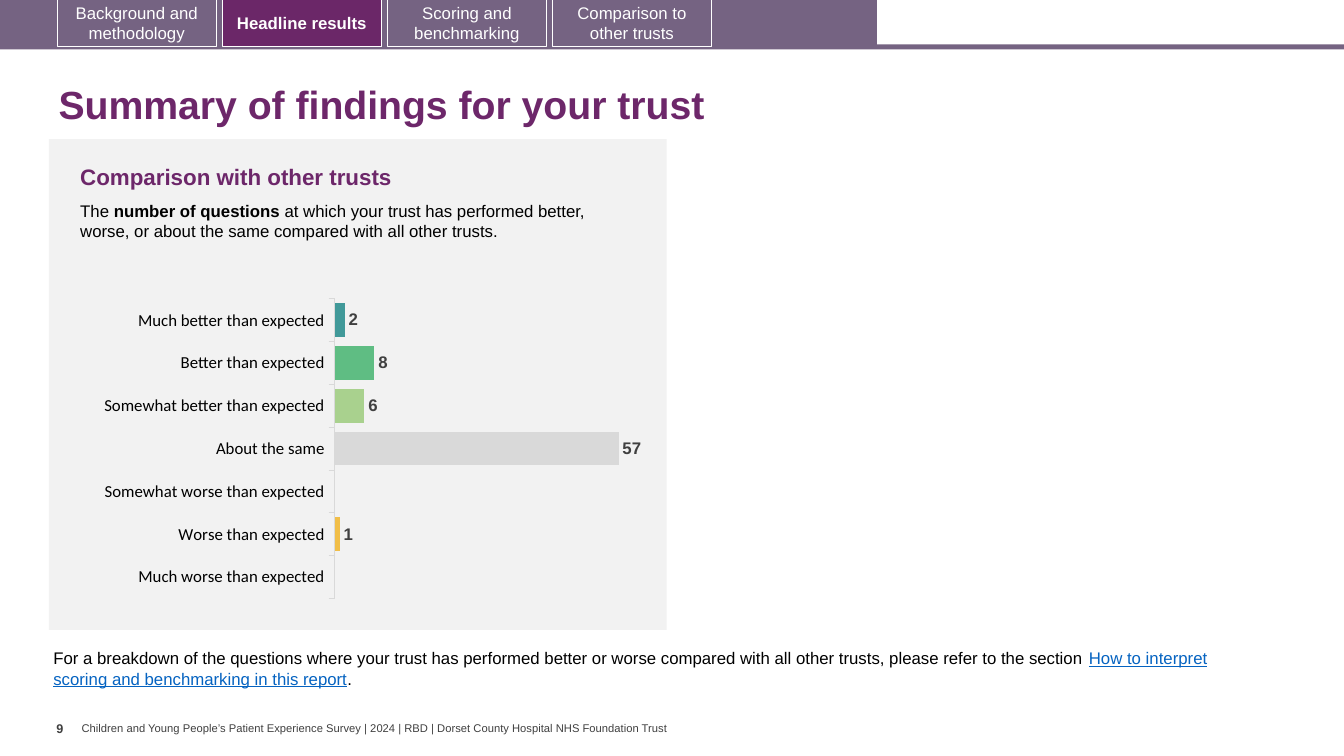
from lxml import etree
from pptx import Presentation
from pptx.chart.data import CategoryChartData
from pptx.dml.color import RGBColor
from pptx.enum.chart import (XL_CHART_TYPE as CT, XL_LABEL_POSITION as LP,
                             XL_TICK_LABEL_POSITION as TLP, XL_TICK_MARK as TM)
from pptx.enum.shapes import MSO_SHAPE as SHAPE
from pptx.enum.text import MSO_ANCHOR as ANCHOR, MSO_AUTO_SIZE as FIT, PP_ALIGN as ALIGN
from pptx.oxml.ns import qn
from pptx.util import Pt

# Content
TITLE = "Summary of findings for your trust"
TABS = ["Background and methodology", "Headline results",
        "Scoring and benchmarking", "Comparison to other trusts"]
ACTIVE_TAB = "Headline results"
PANEL_HEADING = "Comparison with other trusts"
PANEL_TEXT = [
    ("The ", {}),
    ("number of questions ", {"bold": True}),
    ("at which your trust has performed better, worse, or about the same "
     "compared with all other trusts.", {}),
]
NOTE = [
    ("For a breakdown of the questions where your trust has performed better or worse "
     "compared with all other trusts, please refer to the section ", {}),
    ("How to interpret scoring and benchmarking in this report",
     {"color": "link", "underline": True}),
    (".", {}),
]
PAGE = "9"
FOOTER = ("Children and Young People’s Patient Experience Survey | 2024 | RBD | "
          "Dorset County Hospital NHS Foundation Trust")
RESULTS = [  # category, number of questions, bar colour
    ("Much better than expected", 2, "419999"),
    ("Better than expected", 8, "5FBD83"),
    ("Somewhat better than expected", 6, "A9D18E"),
    ("About the same", 57, "D9D9D9"),
    ("Somewhat worse than expected", None, "FFD966"),
    ("Worse than expected", 1, "F1BE48"),
    ("Much worse than expected", None, "E87722"),
]
COLORS = {"bar": "756382", "active": "6B2768", "title": "6D276A", "panel": "F2F2F2",
          "text": "000000", "grey": "404040", "axis": "D9D9D9", "link": "0563C1",
          "white": "FFFFFF"}
PLOT = {"x": 0.467, "y": 0.072, "w": 0.476, "h": 0.872}


def rgb(name):
    return RGBColor.from_string(COLORS.get(name, name))


def set_font(font, size, color="text", bold=False, underline=False, name="Arial"):
    font.name, font.size, font.bold = name, Pt(size), bold
    font.color.rgb = rgb(color)
    if underline:
        font.underline = True


def write(s, text, size=12, color="text", bold=False, align=ALIGN.LEFT,
          anchor=ANCHOR.TOP, wrap=True, insets=None, spacing=None):
    """Fill a shape with one paragraph: a string, or (text, format) runs."""
    tf = s.text_frame
    tf.word_wrap, tf.auto_size, tf.vertical_anchor = wrap, FIT.NONE, anchor
    if insets:
        tf.margin_left, tf.margin_top, tf.margin_right, tf.margin_bottom = map(Pt, insets)
    p = tf.paragraphs[0]
    p.alignment = align
    if spacing:
        p.line_spacing = spacing
    for part, extra in [(text, {})] if isinstance(text, str) else text:
        r = p.add_run()
        r.text = part
        set_font(r.font, **{"size": size, "color": color, "bold": bold, **extra})


def add_rect(box, fill, line=None):
    s = slide.shapes.add_shape(SHAPE.RECTANGLE, *map(Pt, box))
    s.shadow.inherit = False
    s.fill.solid()
    s.fill.fore_color.rgb = rgb(fill)
    if line:
        s.line.color.rgb = rgb(line)
        s.line.width = Pt(0.75)
    else:
        s.line.fill.background()
    return s


def add_text(box, text, **fmt):
    write(slide.shapes.add_textbox(*map(Pt, box)), text, **fmt)


prs = Presentation()
prs.slide_width, prs.slide_height = Pt(960), Pt(540)
slide = prs.slides.add_slide(prs.slide_layouts[5])

# Navigation band and tabs
add_rect((0, 31.7, 960, 3.6), "bar")
add_rect((0, 0, 626.4, 33.8), "bar")
TAB_LEFT, TAB_PITCH, TAB_WIDTH = 41, 117.9, 113.5
for i, label in enumerate(TABS):
    active = label == ACTIVE_TAB
    tab = add_rect((TAB_LEFT + i * TAB_PITCH, -0.7, TAB_WIDTH, 33.8),
                   "active" if active else "bar", line="white")
    write(tab, label, color="white", bold=active, align=ALIGN.CENTER, anchor=ANCHOR.MIDDLE)

# Title
title = slide.shapes.title
title.left, title.top, title.width, title.height = map(Pt, (34.6, 50.4, 899.3, 51.8))
write(title, TITLE, size=28, color="title", bold=True, anchor=ANCHOR.MIDDLE, spacing=0.9)

# Panel
add_rect((34.9, 99.4, 441.4, 350.6), "panel")
add_text((50.2, 113, 397.4, 26.6), PANEL_HEADING, size=16, color="title", bold=True)
add_text((50.2, 139.7, 380.9, 51.1), PANEL_TEXT)

# Chart
data = CategoryChartData(number_format="0")
data.categories = [category for category, _, _ in RESULTS]
data.add_series("Series 1", [count for _, count, _ in RESULTS])
chart = slide.shapes.add_chart(CT.BAR_CLUSTERED, *map(Pt, (29.5, 195.8, 448.6, 245.5)),
                               data).chart
chart.has_legend = chart.has_title = False
set_font(chart.font, 10, name="Calibri")

cat_axis, val_axis = chart.category_axis, chart.value_axis
cat_axis.reverse_order = True
cat_axis.has_major_gridlines = False
cat_axis.major_tick_mark, cat_axis.minor_tick_mark = TM.OUTSIDE, TM.NONE
cat_axis.tick_label_position = TLP.LOW
cat_axis.format.line.color.rgb = rgb("axis")
cat_axis.format.line.width = Pt(0.75)
set_font(cat_axis.tick_labels.font, 12, name="Calibri")
val_axis.minimum_scale, val_axis.maximum_scale = 0, 60
val_axis.has_major_gridlines = val_axis.visible = False

plot = chart.plots[0]
plot.gap_width, plot.vary_by_categories = 27, False
series = plot.series[0]
series.invert_if_negative = False
for i, (_, _, color) in enumerate(RESULTS):
    fill = series.points[i].format.fill
    fill.solid()
    fill.fore_color.rgb = rgb(color)
labels = series.data_labels
labels.show_value, labels.position = True, LP.OUTSIDE_END
labels.number_format, labels.number_format_is_linked = "0", False
set_font(labels.font, 12, color="grey", bold=True)

# Fixed inner plot area
area = plot._element.getparent()
for old in area.findall(qn("c:layout")):
    area.remove(old)
layout = etree.Element(qn("c:layout"))
area.insert(0, layout)
manual = etree.SubElement(layout, qn("c:manualLayout"))
settings = {"layoutTarget": "inner", "xMode": "edge", "yMode": "edge", **PLOT}
for tag, value in settings.items():
    etree.SubElement(manual, qn(f"c:{tag}")).set("val", str(value))

# Note and footer
add_text((31, 459.4, 879.1, 36), NOTE)
add_text((40.3, 511.2, 18, 28.8), PAGE, size=9, color="grey", bold=True,
         wrap=False, insets=(0, 3.6, 0, 3.6))
add_text((58.3, 515.5, 425.5, 9.4), FOOTER, size=8, color="grey",
         anchor=ANCHOR.MIDDLE, wrap=False, insets=(0, 0, 0, 0))

prs.save("out.pptx")
